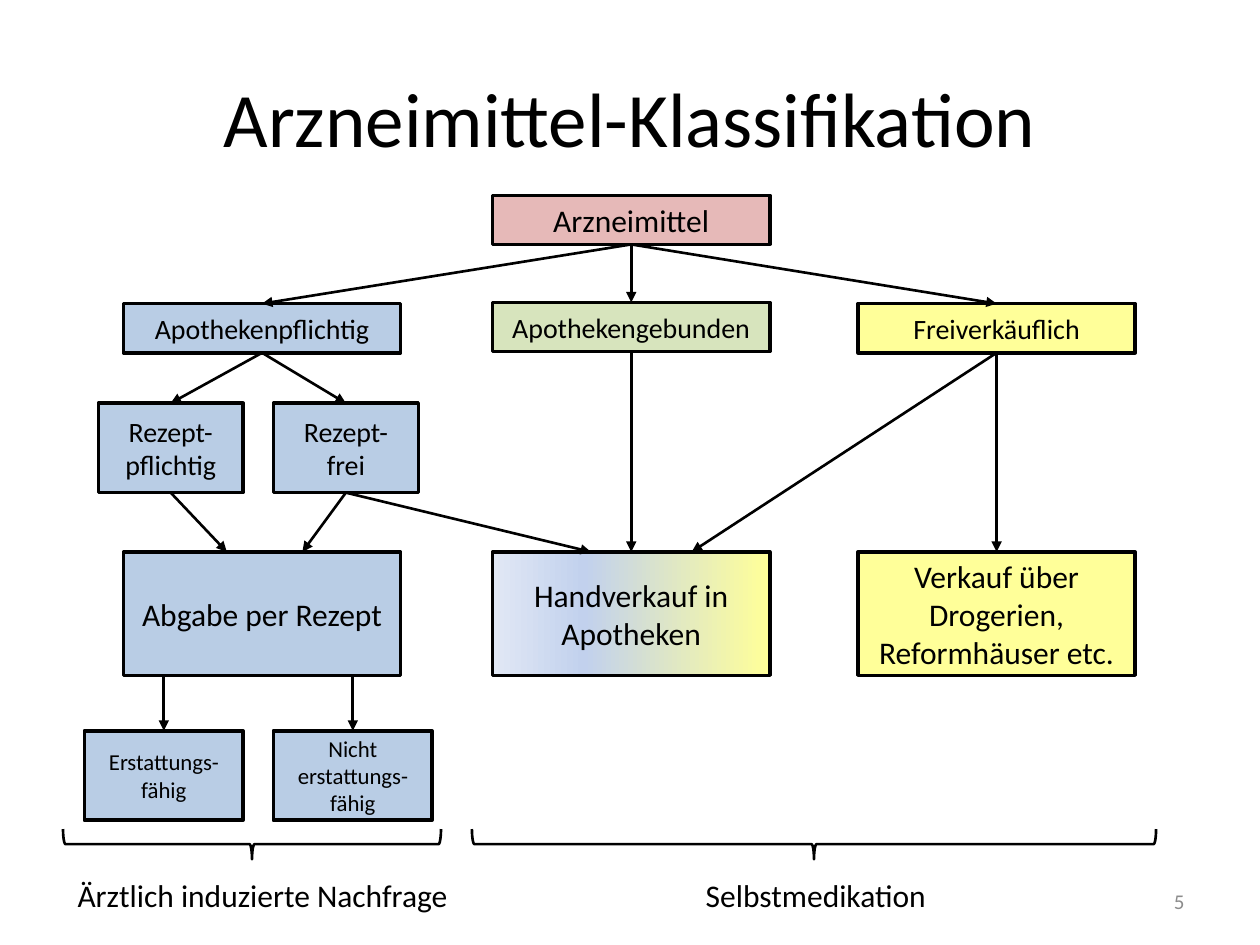
from copy import deepcopy

from pptx import Presentation
from pptx.dml.color import RGBColor
from pptx.enum.shapes import MSO_CONNECTOR, MSO_SHAPE
from pptx.enum.text import MSO_ANCHOR, MSO_AUTO_SIZE, PP_ALIGN
from pptx.oxml.ns import qn
from pptx.oxml.xmlchemy import OxmlElement
from pptx.util import Inches, Pt

COLORS = {
    "black": "000000",
    "gray": "8C8C8C",
    "red": "E6B9B8",
    "blue": "B9CDE5",
    "green": "D7E4BD",
    "yellow": "FFFF99",
    "periwinkle": "C2D1ED",
    "pale": "E1E8F5",
}
TOP, BOTTOM = 0, 2


def rgb(name):
    return RGBColor.from_string(COLORS[name])


class DiagramSlide:
    font_name = "Calibri"
    box_line = Pt(2)
    thin_line = Pt(1.5)

    def __init__(self, presentation):
        self.slide = presentation.slides.add_slide(presentation.slide_layouts[5])
        self.shapes = self.slide.shapes

    def set_text(self, shape, text, size, color="black", align=PP_ALIGN.CENTER):
        shape.text_frame.text = text
        paragraph = shape.text_frame.paragraphs[0]
        paragraph.alignment = align
        paragraph.font.name = self.font_name
        paragraph.font.size = Pt(size)
        paragraph.font.color.rgb = rgb(color)

    def title(self, text):
        title = self.shapes.title
        title.left, title.top = Inches(0.5), Inches(0.3)
        title.width, title.height = Inches(9), Inches(1.25)
        title.text_frame.vertical_anchor = MSO_ANCHOR.MIDDLE
        self.set_text(title, text, 44)

    def outlined(self, kind, left, top, width, height, line_width):
        shape = self.shapes.add_shape(
            kind, Inches(left), Inches(top), Inches(width), Inches(height)
        )
        shape.shadow.inherit = False
        shape.line.color.rgb = rgb("black")
        shape.line.width = line_width
        return shape

    def box(self, text, left, top, width, height, color, size):
        shape = self.outlined(
            MSO_SHAPE.RECTANGLE, left, top, width, height, self.box_line
        )
        shape.fill.solid()
        shape.fill.fore_color.rgb = rgb(color)
        shape.text_frame.word_wrap = True
        shape.text_frame.vertical_anchor = MSO_ANCHOR.MIDDLE
        self.set_text(shape, text, size)
        return shape

    def gradient(self, shape, stops):
        shape.fill.gradient()
        shape.fill.gradient_angle = 180
        stop_list = shape._element.spPr.find(qn("a:gradFill")).find(qn("a:gsLst"))
        while len(stop_list) < len(stops):
            stop_list.append(deepcopy(stop_list[0]))
        for stop, (position, color) in zip(shape.fill.gradient_stops, stops):
            stop.position = position
            stop.color.rgb = rgb(color)

    def brace(self, center, middle, span):
        depth = 0.24
        shape = self.outlined(
            MSO_SHAPE.RIGHT_BRACE, center - depth / 2, middle - span / 2,
            depth, span, self.thin_line,
        )
        shape.fill.background()
        shape.rotation = 90

    def label(self, text, left, top, width):
        shape = self.shapes.add_textbox(
            Inches(left), Inches(top), Inches(width), Inches(0.4)
        )
        shape.text_frame.word_wrap = False
        shape.text_frame.auto_size = MSO_AUTO_SIZE.SHAPE_TO_FIT_TEXT
        self.set_text(shape, text, 18)

    def page_number(self, text):
        shape = self.shapes.add_textbox(
            Inches(7.17), Inches(6.95), Inches(2.33), Inches(0.4)
        )
        shape.text_frame.word_wrap = True
        shape.text_frame.vertical_anchor = MSO_ANCHOR.MIDDLE
        self.set_text(shape, text, 12, "gray", PP_ALIGN.RIGHT)

    def arrow(self, source, target, start_x=None, end_x=None):
        start = source.left + source.width // 2 if start_x is None else Inches(start_x)
        end = target.left + target.width // 2 if end_x is None else Inches(end_x)
        connector = self.shapes.add_connector(
            MSO_CONNECTOR.STRAIGHT, start, source.top + source.height, end, target.top
        )
        if start_x is None:
            connector.begin_connect(source, BOTTOM)
        if end_x is None:
            connector.end_connect(target, TOP)
        connector.line.color.rgb = rgb("black")
        connector.line.width = self.thin_line
        tail = OxmlElement("a:tailEnd")
        tail.set("type", "triangle")
        connector.line._get_or_add_ln().append(tail)
        connector._element.spPr.append(OxmlElement("a:effectLst"))


def main():
    presentation = Presentation()
    presentation.slide_width, presentation.slide_height = Inches(10), Inches(7.5)
    diagram = DiagramSlide(presentation)
    diagram.title("Arzneimittel-Klassifikation")

    left, center, right = 0.98, 3.91, 6.81
    flat, tall = (2.2, 0.39), (2.2, 0.98)
    recipe, refund = (1.15, 0.71), (1.26, 0.71)
    drugs = diagram.box("Arzneimittel", center, 1.55, *flat, "red", 18)
    pharmacy = diagram.box("Apothekenpflichtig", left, 2.41, *flat, "blue", 16)
    bound = diagram.box("Apothekengebunden", center, 2.4, *flat, "green", 16)
    free = diagram.box("Freiverkäuflich", right, 2.41, *flat, "yellow", 16)
    required = diagram.box("Rezept-pflichtig", 0.78, 3.2, *recipe, "blue", 16)
    optional = diagram.box("Rezept-frei", 2.17, 3.2, *recipe, "blue", 16)
    dispensing = diagram.box("Abgabe per Rezept", left, 4.38, *tall, "blue", 18)
    counter = diagram.box("Handverkauf in Apotheken", center, 4.38, *tall, "yellow", 18)
    diagram.gradient(counter, [(0, "yellow"), (0.67, "periwinkle"), (1, "pale")])
    stores = diagram.box(
        "Verkauf über Drogerien, Reformhäuser etc.", right, 4.38, *tall, "yellow", 18
    )
    refunded = diagram.box("Erstattungs-fähig", 0.67, 5.8, *refund, "blue", 13)
    unrefunded = diagram.box("Nicht erstattungs-fähig", 2.17, 5.8, *refund, "blue", 13)

    diagram.brace(2, 6.7, 3)
    diagram.brace(6.46, 6.7, 5.43)
    diagram.label("Ärztlich induzierte Nachfrage", 0.5, 6.9, 3.17)
    diagram.label("Selbstmedikation", 5.49, 6.9, 1.97)

    for source, target in [
        (drugs, bound), (drugs, pharmacy), (drugs, free),
        (bound, counter), (free, stores),
        (pharmacy, optional), (pharmacy, required),
    ]:
        diagram.arrow(source, target)
    diagram.arrow(free, counter, end_x=5.49)
    diagram.arrow(optional, dispensing, end_x=2.4)
    diagram.arrow(required, dispensing, end_x=1.8)
    diagram.arrow(optional, counter, end_x=4.69)
    diagram.arrow(dispensing, refunded, start_x=1.3)
    diagram.arrow(dispensing, unrefunded, start_x=2.8)

    diagram.page_number("5")
    presentation.save("out.pptx")


if __name__ == "__main__":
    main()
